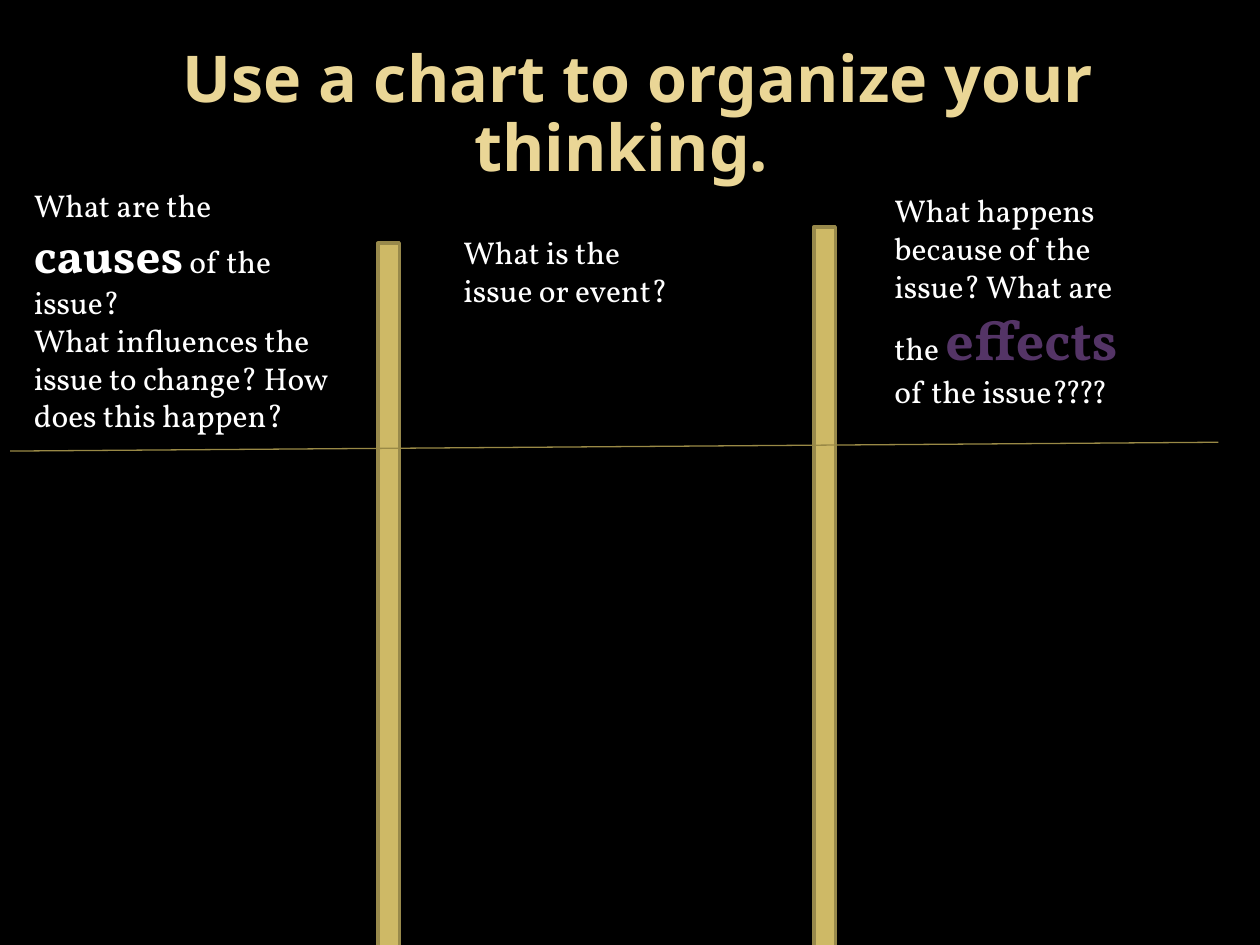
from dataclasses import dataclass

from lxml.etree import SubElement
from pptx import Presentation
from pptx.dml.color import RGBColor
from pptx.enum.shapes import MSO_CONNECTOR as Link, MSO_SHAPE as Form
from pptx.enum.text import MSO_ANCHOR as Anchor, PP_ALIGN as Align
from pptx.oxml.ns import qn
from pptx.util import Inches, Pt

WHITE = "FFFFFF"


@dataclass
class Run:
    text: str
    size: float = 18
    color: str = WHITE
    bold: bool = False
    font: str = "Vollkorn"


@dataclass
class Box:
    left: float
    top: float
    width: float
    height: float
    paras: list[list[Run]]


@dataclass
class Bar:
    left: float
    top: float


TITLE = Box(0.5, 0.3, 9, 1.25, [
    [Run(" Use a chart to organize your thinking. ", 36.9, "EAD696", True, "Noto Sans")],
])
BARS = [Bar(3, 1.93), Bar(6.46, 1.8)]
NOTES = [
    Box(0.17, 1.43, 2.67, 2.09, [
        [Run("What are the "), Run("causes", 28, bold=True), Run(" of the issue?")],
        [Run("What influences the issue to change? How does this happen?")],
    ]),
    Box(3.58, 1.8, 2, 0.71, [[Run("What is the issue or event?")]]),
    Box(7, 1.47, 2.25, 1.85, [[
        Run("What happens because of the issue? What are the "),
        Run("effects ", 32, "543466", True),
        Run("of the issue????"),
    ]]),
]


def paint(fmt, color: str) -> None:
    fmt.solid()
    fmt.fore_color.rgb = RGBColor.from_string(color)


def add_text(slide, box: Box):
    shape = slide.shapes.add_textbox(
        Inches(box.left), Inches(box.top), Inches(box.width), Inches(box.height))
    frame = shape.text_frame
    frame.word_wrap = True
    for i, runs in enumerate(box.paras):
        para = frame.add_paragraph() if i else frame.paragraphs[0]
        for item in runs:
            run = para.add_run()
            run.text = item.text
            run.font.name = item.font
            run.font.size = Pt(item.size)
            run.font.bold = item.bold
            paint(run.font.fill, item.color)
    return frame


def add_title(slide, box: Box) -> None:
    frame = add_text(slide, box)
    frame.vertical_anchor = Anchor.MIDDLE
    para = frame.paragraphs[0]
    para.alignment = Align.CENTER
    para.line_spacing = 0.89


def add_bar(slide, bar: Bar) -> None:
    shape = slide.shapes.add_shape(
        Form.RECTANGLE, Inches(bar.left), Inches(bar.top), Inches(0.17), Inches(5.75))
    shape.shadow.inherit = False
    paint(shape.fill, "CEB966")
    paint(shape.line.fill, "98894B")
    shape.line.width = Pt(2)


def add_rule(slide) -> None:
    rule = slide.shapes.add_connector(
        Link.STRAIGHT, Inches(0.08), Inches(3.58), Inches(9.67), Inches(3.51))
    paint(rule.line.fill, "998946")
    rule.line.width = Pt(0.75)
    SubElement(rule._element.spPr, qn("a:effectLst"))


def main() -> None:
    deck = Presentation()
    deck.slide_width, deck.slide_height = Inches(10), Inches(7.5)
    slide = deck.slides.add_slide(deck.slide_layouts[6])
    paint(slide.background.fill, "000000")
    add_title(slide, TITLE)
    for bar in BARS:
        add_bar(slide, bar)
    for note in NOTES:
        add_text(slide, note)
    add_rule(slide)
    deck.save("out.pptx")


if __name__ == "__main__":
    main()
